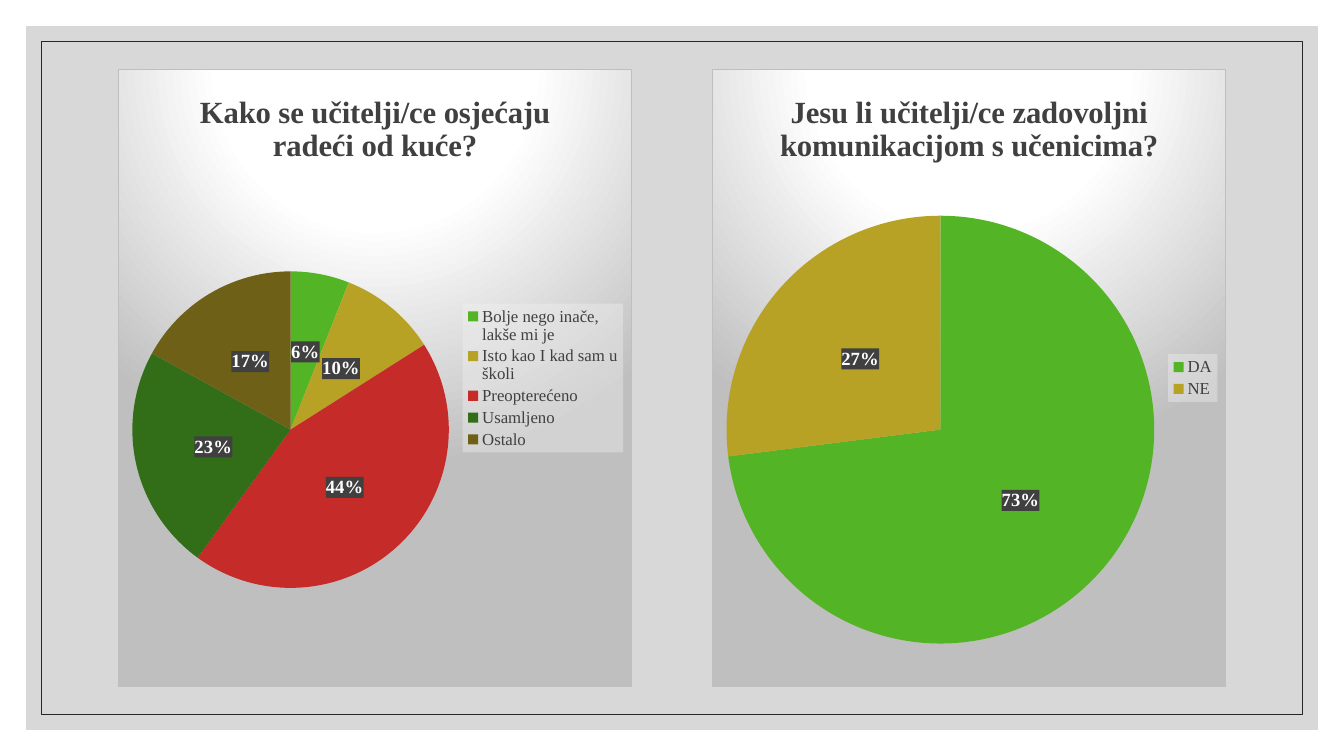
from dataclasses import dataclass

from lxml.etree import SubElement
from pptx import Presentation
from pptx.chart.chart import Chart
from pptx.chart.data import CategoryChartData
from pptx.dml.color import RGBColor
from pptx.enum.chart import XL_CHART_TYPE, XL_LABEL_POSITION, XL_LEGEND_POSITION
from pptx.enum.shapes import MSO_SHAPE
from pptx.oxml import parse_xml
from pptx.oxml.ns import nsdecls, qn
from pptx.shapes.autoshape import Shape
from pptx.slide import Slide
from pptx.text.text import Font
from pptx.util import Pt

SLIDE_WIDTH, SLIDE_HEIGHT = 960, 540
CHART_TOP, CHART_WIDTH, CHART_HEIGHT = 49, 367.2, 442
FONT_NAME = "Times New Roman"
DARK_GREY, MID_GREY = "404040", "BFBFBF"
SLICE_COLORS = ["53B526", "B8A226", "C42B29", "326D17", "6E6117"]


@dataclass
class Survey:
    left: float
    question: str
    answers: dict[str, int]


SURVEYS = [
    Survey(84.3, "Kako se učitelji/ce osjećaju radeći od kuće?", {
        "Bolje nego inače, lakše mi je": 6,
        "Isto kao I kad sam u školi": 10,
        "Preopterećeno": 44,
        "Usamljeno": 23,
        "Ostalo": 17,
    }),
    Survey(508.7, "Jesu li učitelji/ce zadovoljni komunikacijom s učenicima?", {
        "DA": 73,
        "NE": 27,
    }),
]


def rgb(hex_color: str) -> RGBColor:
    return RGBColor.from_string(hex_color)


def style_font(font: Font, size: float, color: str, bold: bool = False) -> None:
    font.name = FONT_NAME
    font.size = Pt(size)
    font.bold = bold
    font.color.rgb = rgb(color)


def add_frame(slide: Slide, margin: float) -> Shape:
    frame = slide.shapes.add_shape(
        MSO_SHAPE.RECTANGLE, Pt(margin), Pt(margin),
        Pt(SLIDE_WIDTH - 2 * margin), Pt(SLIDE_HEIGHT - 2 * margin))
    frame.shadow.inherit = False
    return frame


def translucent_panel(color: str, alpha: int):
    return parse_xml(
        f'<c:spPr {nsdecls("c", "a")}><a:solidFill><a:srgbClr val="{color}">'
        f'<a:alpha val="{alpha * 1000}"/></a:srgbClr></a:solidFill>'
        '<a:ln><a:noFill/></a:ln></c:spPr>')


def add_spotlight(chart: Chart) -> None:
    stops = "".join(
        f'<a:gs pos="{position * 1000}"><a:srgbClr val="{color}"/></a:gs>'
        for position, color in [(0, "FFFFFF"), (39, "FFFFFF"), (100, MID_GREY)])
    chart._chartSpace.find(qn("c:chart")).addnext(parse_xml(
        f'<c:spPr {nsdecls("c", "a")}><a:gradFill><a:gsLst>{stops}</a:gsLst>'
        '<a:path path="circle"><a:fillToRect l="50000" t="-80000" r="50000" '
        'b="180000"/></a:path></a:gradFill>'
        f'<a:ln w="{Pt(0.75)}"><a:solidFill><a:srgbClr val="{MID_GREY}"/>'
        '</a:solidFill></a:ln></c:spPr>'))


def add_survey(slide: Slide, survey: Survey) -> None:
    results = CategoryChartData()
    results.categories = list(survey.answers)
    results.add_series(survey.question, list(survey.answers.values()))
    chart = slide.shapes.add_chart(
        XL_CHART_TYPE.PIE, Pt(survey.left), Pt(CHART_TOP),
        Pt(CHART_WIDTH), Pt(CHART_HEIGHT), results).chart
    style_font(chart.font, 10, "000000")
    add_spotlight(chart)

    question = chart.chart_title.text_frame.paragraphs[0].add_run()
    question.text = survey.question
    style_font(question.font, 22, DARK_GREY, bold=True)
    chart.chart_title.include_in_layout = False

    chart.has_legend = True
    legend = chart.legend
    legend.position = XL_LEGEND_POSITION.RIGHT
    legend.include_in_layout = False
    style_font(legend.font, 12, DARK_GREY)
    legend._element.find(qn("c:txPr")).addprevious(translucent_panel("F2F2F2", 39))

    pie = chart.plots[0]
    pie.vary_by_categories = True
    answers = pie.series[0]
    for index, color in enumerate(SLICE_COLORS[:len(survey.answers)]):
        slice_fill = answers.points[index].format.fill
        slice_fill.solid()
        slice_fill.fore_color.rgb = rgb(color)

    shares = answers.data_labels
    style_font(shares.font, 13.3, "FFFFFF", bold=True)
    shares.show_value = False
    shares.show_percentage = True
    shares.number_format = "0%"
    shares.number_format_is_linked = False
    shares.position = XL_LABEL_POSITION.CENTER
    shares._element.find(qn("c:txPr")).addprevious(translucent_panel(DARK_GREY, 90))


def main() -> None:
    presentation = Presentation()
    presentation.slide_width = Pt(SLIDE_WIDTH)
    presentation.slide_height = Pt(SLIDE_HEIGHT)
    slide = presentation.slides.add_slide(presentation.slide_layouts[6])

    backdrop = add_frame(slide, 18.7)
    backdrop.fill.solid()
    backdrop.fill.fore_color.rgb = rgb(MID_GREY)
    backdrop_color = backdrop._element.spPr.find(qn("a:solidFill"))[0]
    SubElement(backdrop_color, qn("a:alpha"), val="60000")
    backdrop.line.fill.background()

    outline = add_frame(slide, 29.5)
    outline.fill.background()
    outline.line.color.rgb = rgb("262626")
    outline.line.width = Pt(0.5)

    for survey in SURVEYS:
        add_survey(slide, survey)
    presentation.save("out.pptx")


if __name__ == "__main__":
    main()
